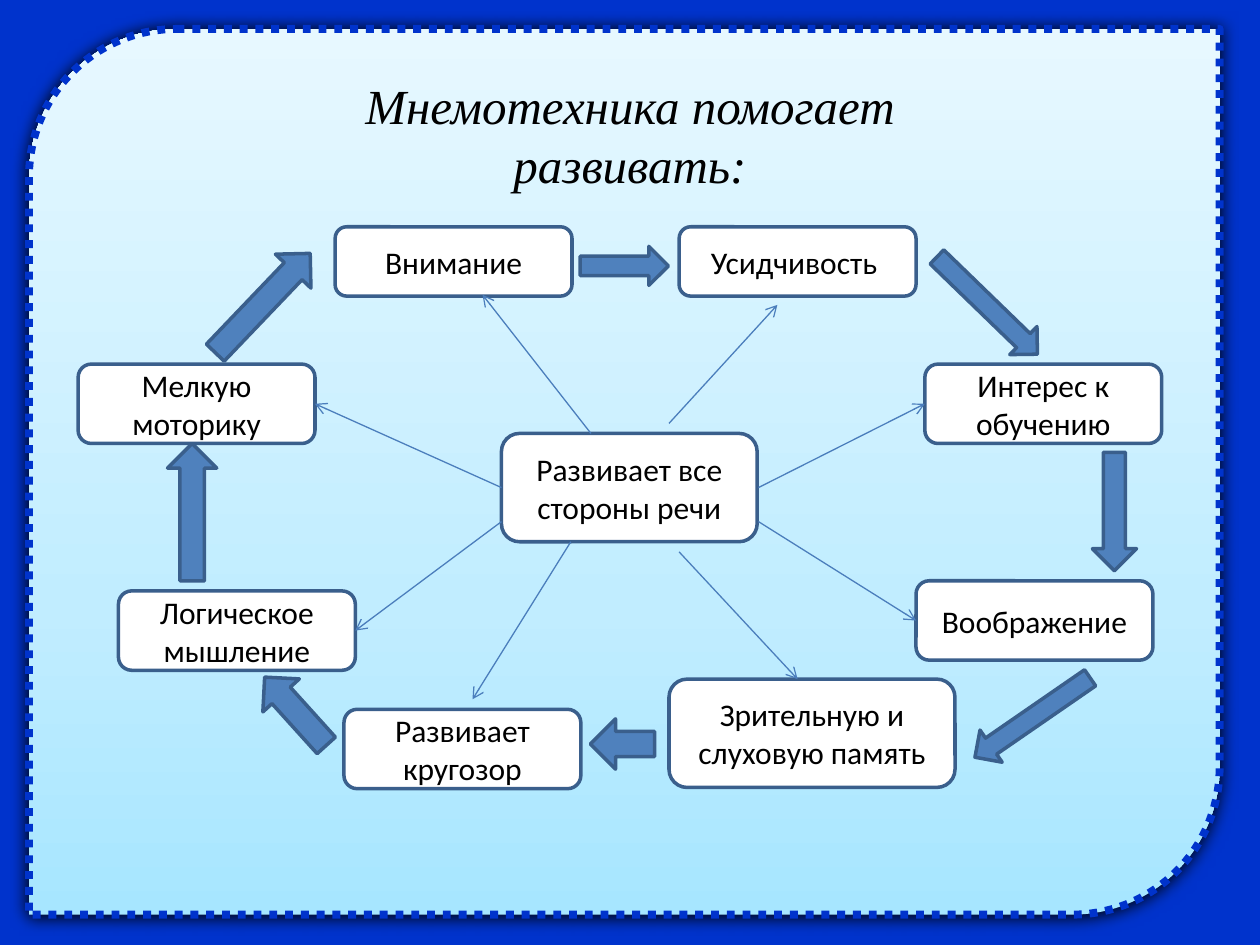
from copy import deepcopy
from pptx import Presentation
from pptx.dml.color import RGBColor
from pptx.enum.dml import MSO_LINE
from pptx.enum.shapes import MSO_CONNECTOR, MSO_SHAPE
from pptx.enum.text import MSO_ANCHOR, PP_ALIGN
from pptx.oxml import parse_xml
from pptx.oxml.ns import nsdecls, qn
from pptx.util import Inches, Pt

PANEL = MSO_SHAPE.ROUND_2_DIAG_RECTANGLE
ROUND = MSO_SHAPE.ROUNDED_RECTANGLE
DOWN = MSO_SHAPE.DOWN_ARROW
STRAIGHT = MSO_CONNECTOR.STRAIGHT
DOTS = MSO_LINE.ROUND_DOT
CENTER = PP_ALIGN.CENTER
MIDDLE = MSO_ANCHOR.MIDDLE
LEFT, RIGHT = 1, 3

WIDTH, HEIGHT = Inches(10), Inches(7.5)
COLS, ROWS = 100, 75
BLUE, EDGE = "0033CC", "3A5F8C"

HUB = ("Развивает все стороны речи", 39.8, 34.4, 20.3, 8.6)
TOPICS = {
    "focus": ("Внимание", 26.6, 18, 18.8, 5.5),
    "motor": ("Мелкую моторику", 6.2, 28.9, 18.8, 6.3),
    "logic": ("Логическое мышление", 9.4, 46.9, 18.8, 6.3),
    "scope": ("Развивает кругозор", 27.3, 56.3, 18.8, 6.3),
    "memory": ("Зрительную и слуховую память", 53.1, 53.9, 22.7, 8.6),
    "fancy": ("Воображение", 72.7, 46.1, 18.8, 6.3),
    "study": ("Интерес к обучению", 73.4, 28.9, 18.8, 6.3),
    "patience": ("Усидчивость ", 53.9, 18, 18.8, 5.5),
}
CYCLE = [
    (48, 17.6, 3.1, 7, 270),
    (76.8, 18.7, 3.1, 11.1, 314.1),
    (86.7, 35.9, 3.5, 9.4, 0),
    (80.4, 51.4, 3.1, 11.1, 55.4),
    (47.4, 56.5, 4, 5.1, 90),
    (21.5, 52.8, 3.9, 7.3, 137.9),
    (13.3, 35.2, 3.9, 10.9, 180),
    (18.9, 18.6, 3.9, 10.9, 223.7),
]
RAYS = [
    (46.9, 34.4, 38.3, 23.4, None, None),
    (39.8, 38.7, 25, 32, "motor", RIGHT),
    (39.8, 41.4, 28.1, 50, "logic", RIGHT),
    (45.3, 43, 37.5, 55.5, None, None),
    (53.9, 43.8, 63.3, 53.9, None, None),
    (60.2, 41.4, 72.7, 49.2, "fancy", LEFT),
    (60.2, 38.7, 73.4, 32, "study", LEFT),
    (53.1, 33.6, 61.7, 24.2, None, None),
]


def color(text):
    """Turn a hex string into a colour."""
    return RGBColor.from_string(text)


def place(box, *cells):
    """Turn grid columns and rows (x, y, x, y) into lengths within the box."""
    left, top, width, height = box
    units = (width / COLS, height / ROWS)
    start = (left, top, 0, 0) if len(cells) == 4 else (left, top)
    return [round(s + c * units[i % 2]) for i, (s, c) in enumerate(zip(start, cells))]


def add_form(slide, kind, area, fill, edge=EDGE, weight=2):
    """Add a preset shape with a plain fill and outline and no shadow."""
    form = slide.shapes.add_shape(kind, *area)
    form.shadow.inherit = False
    form.fill.solid()
    form.fill.fore_color.rgb = color(fill)
    form.line.color.rgb = color(edge)
    form.line.width = Pt(weight)
    return form


def write(frame, text, font, size, italic=False):
    """Put one centred paragraph into a text frame."""
    frame.word_wrap = True
    para = frame.paragraphs[0]
    para.text = text
    para.alignment = CENTER
    para.font.name = font
    para.font.size = Pt(size)
    para.font.italic = italic
    para.font.color.rgb = color("000000")


def add_panel(slide, box):
    """Draw the dotted panel with its gradient and soft shadow."""
    panel = add_form(slide, PANEL, place(box, 2.3, 2.3, 94.5, 70.3), "FFFFFF", BLUE, 4.5)
    panel.line.dash_style = DOTS
    panel.fill.gradient()
    panel.fill.gradient_angle = 90
    props = panel.element.spPr
    stops = props.find(qn("a:gradFill")).find(qn("a:gsLst"))
    stops.append(deepcopy(stops[-1]))
    shades = [(0, "A7E6FF"), (0.35, "C1EDFF"), (1, "E7F8FF")]
    for stop, (share, shade) in zip(panel.fill.gradient_stops, shades):
        stop.position = share
        stop.color.rgb = color(shade)
    props.find(qn("a:effectLst")).append(parse_xml(
        f'<a:outerShdw {nsdecls("a")} blurRad="{Pt(8.5)}" dist="{Pt(1)}" '
        'dir="5400000" rotWithShape="0"><a:srgbClr val="000000"/></a:outerShdw>'))


def add_title(slide, box):
    """Write the slide title."""
    title = slide.shapes.add_textbox(*place(box, 20.3, 5.5, 59.4, 10.4))
    write(title.text_frame, "Мнемотехника помогает развивать:", "Times New Roman", 28, True)


def add_topic(slide, box, text, *cells):
    """Add one rounded topic box."""
    topic = add_form(slide, ROUND, place(box, *cells), "FFFFFF")
    topic.text_frame.vertical_anchor = MIDDLE
    write(topic.text_frame, text, "Calibri", 18)
    return topic


def add_ray(slide, box, start, end, goal, side):
    """Add a thin arrow from the hub towards a topic."""
    ray = slide.shapes.add_connector(STRAIGHT, *place(box, *start), *place(box, *end))
    if goal is not None:
        ray.end_connect(goal, side)
    ray.line.color.rgb = color("4B7EBC")
    ray.line.width = Pt(0.75)
    ray.line._get_or_add_ln().append(parse_xml(f'<a:tailEnd {nsdecls("a")} type="arrow"/>'))
    ray.element.spPr.append(parse_xml(f'<a:effectLst {nsdecls("a")}/>'))


def add_wheel(slide, box):
    """Draw the topics, the cycle around them and the rays from the hub."""
    topics = {name: add_topic(slide, box, *topic) for name, topic in TOPICS.items()}
    add_topic(slide, box, *HUB)
    for *cells, turn in CYCLE:
        add_form(slide, DOWN, place(box, *cells), "4F81BD").rotation = turn
    for x, y, to_x, to_y, name, side in RAYS:
        add_ray(slide, box, (x, y), (to_x, to_y), topics.get(name), side)


def main():
    """Build and save the slide."""
    deck = Presentation()
    deck.slide_width, deck.slide_height = WIDTH, HEIGHT
    slide = deck.slides.add_slide(deck.slide_layouts[6])
    slide.background.fill.solid()
    slide.background.fill.fore_color.rgb = color(BLUE)
    box = (0, 0, WIDTH, HEIGHT)
    for part in (add_panel, add_title, add_wheel):
        part(slide, box)
    deck.save("out.pptx")


if __name__ == "__main__":
    main()
